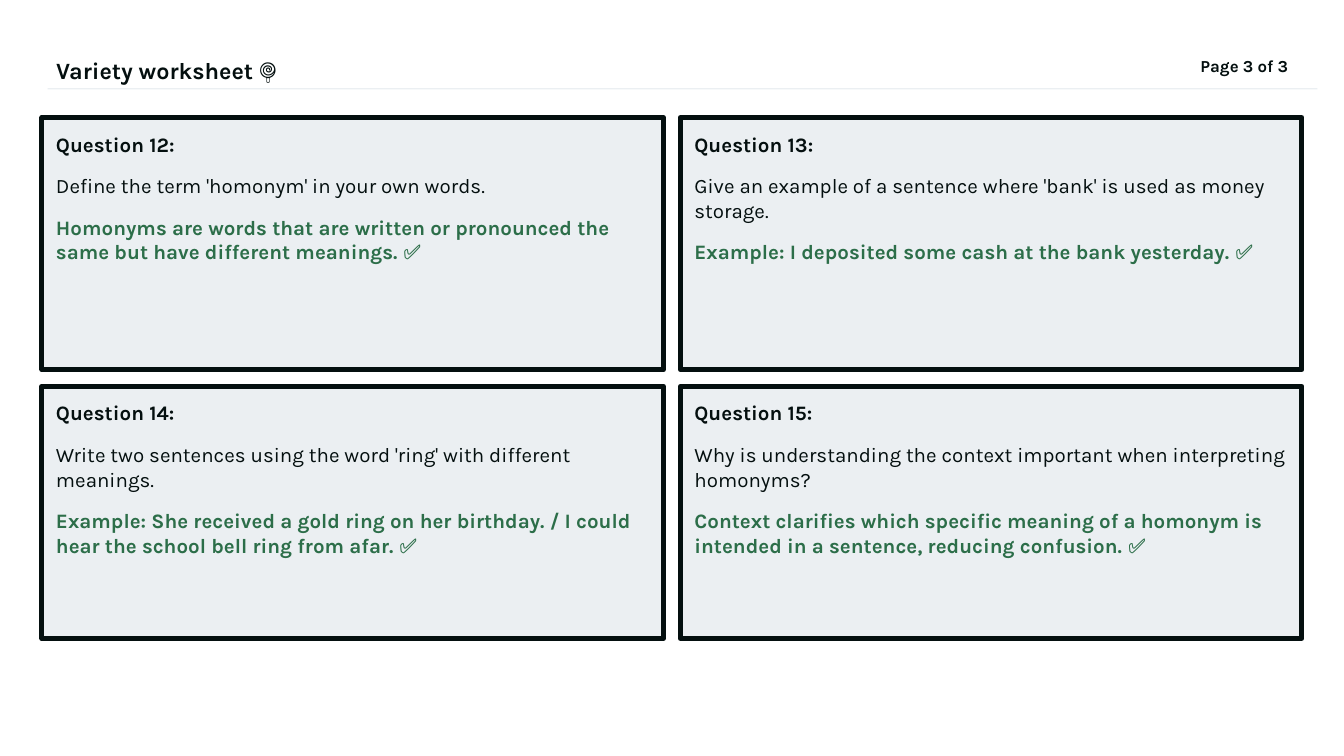
from pptx import Presentation
from pptx.dml.color import RGBColor
from pptx.enum.shapes import MSO_SHAPE
from pptx.enum.text import MSO_ANCHOR, MSO_AUTO_SIZE, PP_ALIGN
from pptx.util import Pt

RECTANGLE = MSO_SHAPE.RECTANGLE
TOP = MSO_ANCHOR.TOP
NO_FIT = MSO_AUTO_SIZE.NONE
LEFT, RIGHT = PP_ALIGN.LEFT, PP_ALIGN.RIGHT

PX = 9525  # 96 px to the inch
INK, GREEN, PALE = "040F0F", "2C6E49", "EBEFF2"


def color(value):
    return RGBColor.from_string(value)


def write(shape, lines, size, alignment=LEFT):
    """Fill a shape with one paragraph per (text, colour, bold) line."""
    frame = shape.text_frame
    frame.word_wrap = True
    frame.auto_size = NO_FIT
    frame.vertical_anchor = TOP
    frame.margin_left = frame.margin_right = 10 * PX
    frame.margin_top = frame.margin_bottom = 10 * PX
    for index, (text, text_color, bold) in enumerate(lines):
        paragraph = frame.add_paragraph() if index else frame.paragraphs[0]
        paragraph.alignment = alignment
        paragraph.space_before = Pt(9 if index else 0)
        run = paragraph.add_run()
        run.text = text
        run.font.name = "Karla"
        run.font.size = Pt(size)
        run.font.bold = bold
        run.font.color.rgb = color(text_color)


presentation = Presentation()
presentation.slide_width = 960 * PX
presentation.slide_height = 540 * PX
slide = presentation.slides.add_slide(presentation.slide_layouts[5])

# Header: title, page number and rule
title = slide.shapes.title
title.left, title.top = 30 * PX, 30 * PX
title.width, title.height = 600 * PX, 120 * PX
write(title, [("Variety worksheet 🍭", INK, True)], 12.5)

page_number = slide.shapes.add_textbox(810 * PX, 30 * PX, 120 * PX, 120 * PX)
write(page_number, [("Page 3 of 3", INK, True)], 9, RIGHT)

rule = slide.shapes.add_shape(RECTANGLE, 34 * PX, 63 * PX, 907 * PX, 1 * PX)
rule.shadow.inherit = False
rule.fill.solid()
rule.fill.fore_color.rgb = color(PALE)
rule.line.fill.background()

# Question cards in a two by two grid
questions = [
    ("Define the term 'homonym' in your own words.",
     "Homonyms are words that are written or pronounced the same but have "
     "different meanings. ✅"),
    ("Give an example of a sentence where 'bank' is used as money storage.",
     "Example: I deposited some cash at the bank yesterday. ✅"),
    ("Write two sentences using the word 'ring' with different meanings.",
     "Example: She received a gold ring on her birthday. / I could hear the "
     "school bell ring from afar. ✅"),
    ("Why is understanding the context important when interpreting homonyms?",
     "Context clarifies which specific meaning of a homonym is intended in a "
     "sentence, reducing confusion. ✅"),
]
CARD_WIDTH, CARD_HEIGHT, GAP = 444, 180, 12

for index, (question, answer) in enumerate(questions):
    row, column = divmod(index, 2)
    left = 30 + column * (CARD_WIDTH + GAP)
    top = 84 + row * (CARD_HEIGHT + GAP)
    card = slide.shapes.add_shape(
        RECTANGLE, left * PX, top * PX, CARD_WIDTH * PX, CARD_HEIGHT * PX)
    card.shadow.inherit = False
    card.fill.solid()
    card.fill.fore_color.rgb = color(PALE)
    card.line.color.rgb = color(INK)
    card.line.width = Pt(2.7)
    write(card, [(f"Question {12 + index}:", INK, True),
                 (question, INK, False),
                 (answer, GREEN, True)], 11)

presentation.save("out.pptx")
